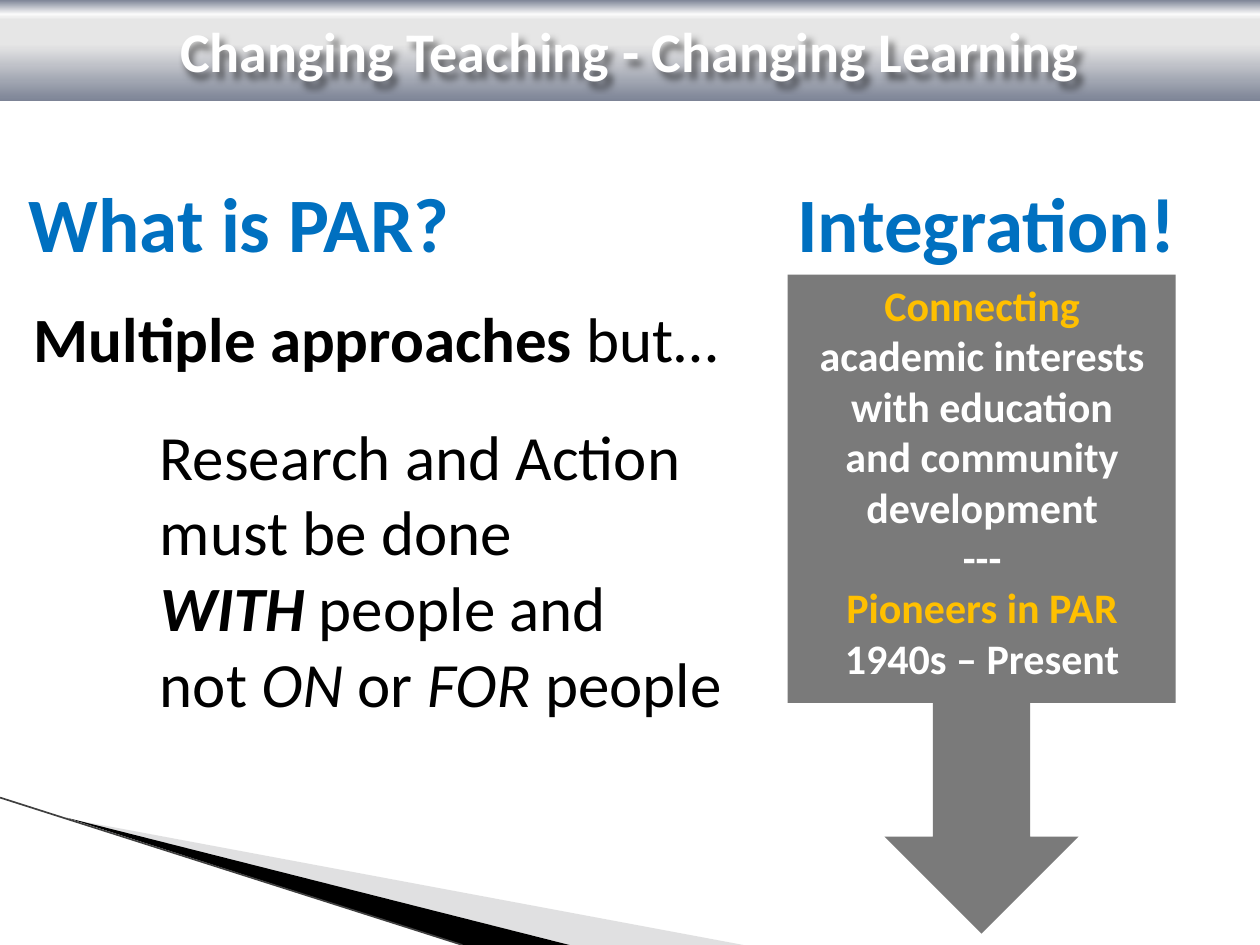
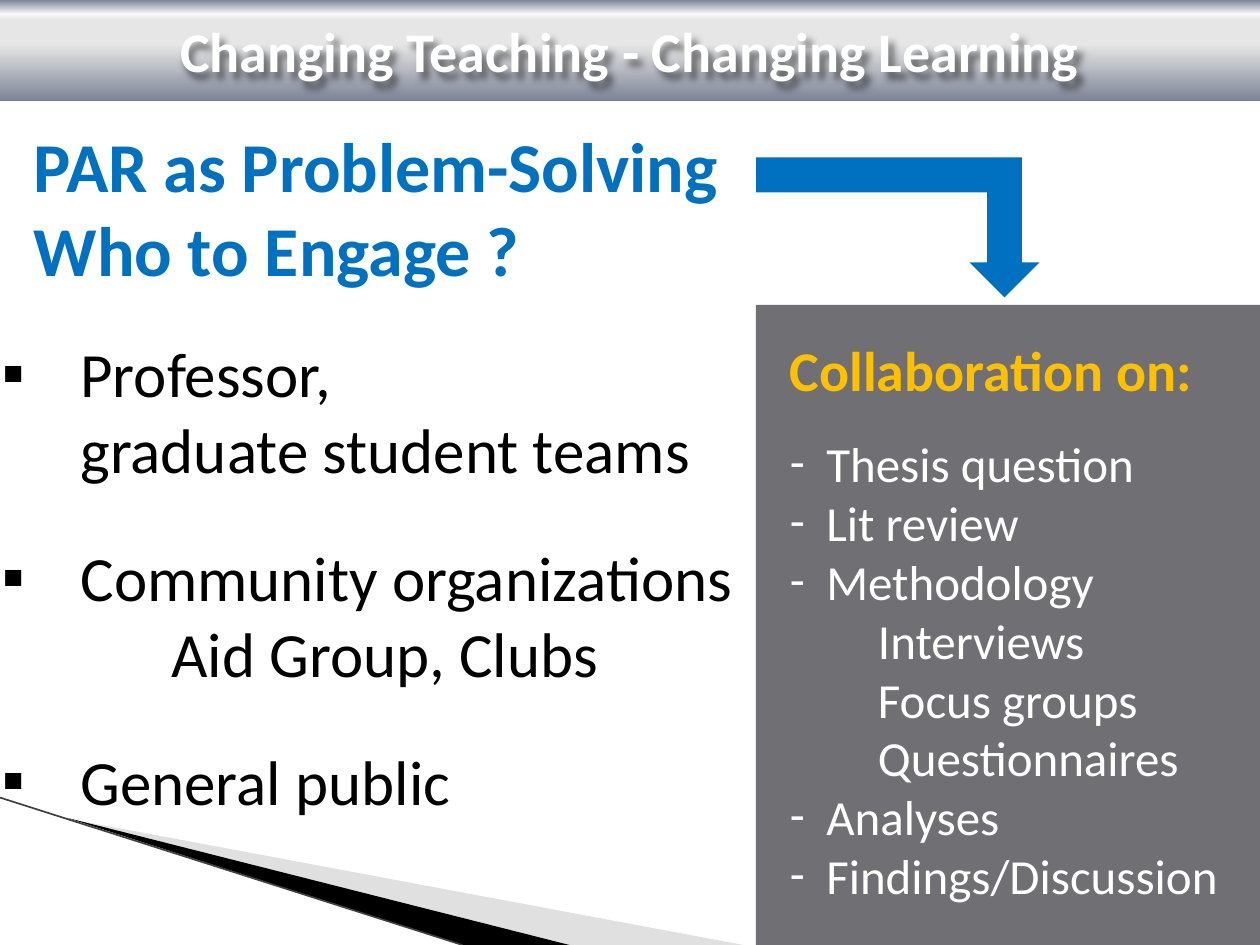
from lxml import etree
from pptx import Presentation
from pptx.dml.color import RGBColor
from pptx.enum.shapes import MSO_CONNECTOR, MSO_SHAPE
from pptx.enum.text import PP_ALIGN
from pptx.oxml import parse_xml
from pptx.oxml.ns import nsdecls, qn
from pptx.util import Emu, Inches, Pt

FONT = "Calibri"
COLORS = {
    "blue": "0070C0",
    "gold": "FFC000",
    "white": "FFFFFF",
    "black": "000000",
    "callout": "595959",
    "panel": "6F6F74",
    "wedge": "B3B3B5",
    "edge": "404040",
}
BAND_STOPS = [(0, "7D8496"), (14, "FAFAFA"), (20, "E6E6E6"), (44, "E6E6E6"), (100, "7D8496")]
RGB = {name: RGBColor.from_string(value) for name, value in COLORS.items()}

presentation = Presentation()
presentation.slide_width = Inches(10)
presentation.slide_height = Inches(7.5)
COLUMN = presentation.slide_width // 100
ROW = presentation.slide_height // 75


def paint(shape, color, alpha=None):
    shape.shadow.inherit = False
    shape.line.fill.background()
    shape.fill.solid()
    shape.fill.fore_color.rgb = RGB[color]
    if alpha:
        color_node = shape._element.spPr.find(qn("a:solidFill"))[0]
        etree.SubElement(color_node, qn("a:alpha")).set("val", str(alpha * 1000))


def write(slide, area, rows, size, color, bold=False, align=PP_ALIGN.LEFT):
    left, top, width, height = area
    text_box = slide.shapes.add_textbox(
        Emu(int(left * COLUMN)), Emu(int(top * ROW)), Emu(int(width * COLUMN)), Emu(int(height * ROW)))
    text_frame = text_box.text_frame
    text_frame.word_wrap = True
    for index, (text, options) in enumerate(rows):
        paragraph = text_frame.paragraphs[0] if index == 0 else text_frame.add_paragraph()
        first, *others = text.split("|")
        paragraph.text = first
        for piece in others:
            paragraph.add_run().text = piece
        properties = paragraph._p.get_or_add_pPr()
        properties.set("marL", str(int(options.get("indent", 0) * COLUMN)))
        properties.set("indent", str(int(-options.get("hang", 0) * COLUMN)))
        if "bullet" in options:
            etree.SubElement(properties, qn("a:buFont")).set("typeface", FONT)
            etree.SubElement(properties, qn("a:buChar")).set("char", options["bullet"])
        paragraph.alignment = align
        paragraph.space_after = Pt(options.get("after", 0))
        for run in paragraph.runs:
            run.font.name = FONT
            run.font.size = Pt(options.get("size", size))
            run.font.bold = options.get("bold", bold)
            run.font.color.rgb = RGB[options.get("color", color)]
    return text_box


slides = [presentation.slides.add_slide(presentation.slide_layouts[6]) for _ in range(2)]
integration_slide, engagement_slide = slides

wedges = [
    ([(5.5, 65), (59, 75), (45.2, 75)], "wedge", 40),
    ([(5.3, 64.9), (45.2, 75), (36.7, 75)], "black", None),
]
for slide in slides:
    for corners, color, alpha in wedges:
        points = [(int(x * COLUMN), int(y * ROW)) for x, y in corners]
        builder = slide.shapes.build_freeform(*points[0])
        builder.add_line_segments(points[1:])
        paint(builder.convert_to_shape(), color, alpha)

    edge = slide.shapes.add_connector(
        MSO_CONNECTOR.STRAIGHT, 0, int(63.3 * ROW), int(36.7 * COLUMN), 75 * ROW)
    edge.line.color.rgb = RGB["edge"]
    edge.line.width = Pt(0.95)
    etree.SubElement(edge._element.spPr, qn("a:effectLst"))

    band = slide.shapes.add_shape(MSO_SHAPE.RECTANGLE, 0, 0, 100 * COLUMN, 8 * ROW)
    paint(band, "white")
    stops = "".join(
        f'<a:gs pos="{position * 1000}"><a:srgbClr val="{color}"/></a:gs>'
        for position, color in BAND_STOPS)
    gradient = parse_xml(
        f'<a:gradFill {nsdecls("a")} rotWithShape="1"><a:gsLst>{stops}</a:gsLst>'
        '<a:lin ang="5400000" scaled="0"/></a:gradFill>')
    band_properties = band._element.spPr
    band_properties.replace(band_properties.find(qn("a:solidFill")), gradient)

    title = write(slide, (0, 0.8, 100, 5.6), [("Changing Teaching - Changing Learning", {})],
                  32, "white", True, PP_ALIGN.CENTER)
    title._element.spPr.append(parse_xml(
        f'<a:effectLst {nsdecls("a")}><a:outerShdw blurRad="50800" dist="50800" dir="3600000">'
        '<a:srgbClr val="000000"><a:alpha val="50000"/></a:srgbClr></a:outerShdw></a:effectLst>'))

callout = integration_slide.shapes.add_shape(
    MSO_SHAPE.DOWN_ARROW_CALLOUT, int(62.5 * COLUMN), int(21.8 * ROW),
    int(30.8 * COLUMN), int(52.3 * ROW))
paint(callout, "callout", 80)

for heading, left, width in [("What is PAR?", 1.3, 58.7), ("Integration!", 62.3, 37.7)]:
    write(integration_slide, (left, 13.4, width, 8), [(heading, {})], 44, "blue", True)

history = write(integration_slide, (63.8, 21.7, 28.3, 37.4), [
    ("Connecting |academic interests with education and community development", {}),
    ("---", {}),
    ("Pioneers in PAR", {"color": "gold"}),
    ("1940s – Present", {}),
], 24, "white", True, PP_ALIGN.CENTER)
history.text_frame.paragraphs[0].runs[0].font.color.rgb = RGB["gold"]

approaches = write(integration_slide, (1.7, 23.3, 59.2, 39.4), [
    ("Multiple approaches |but…", {"after": 24}),
    ("Research and Action", {"indent": 10}),
    ("must be done", {"indent": 10}),
    ("WITH| people and", {"indent": 10}),
    ("not |ON |or |FOR| people", {"indent": 10}),
], 36, "black")
opening, _, _, with_people, not_for_people = approaches.text_frame.paragraphs
for run in (opening.runs[0], with_people.runs[0]):
    run.font.bold = True
for run in (with_people.runs[0], not_for_people.runs[1], not_for_people.runs[3]):
    run.font.italic = True

panel = engagement_slide.shapes.add_shape(
    MSO_SHAPE.RECTANGLE, 60 * COLUMN, int(24.2 * ROW), 40 * COLUMN, int(50.8 * ROW))
paint(panel, "panel")

write(engagement_slide, (1.7, 9.2, 98.3, 14.5),
      [("PAR as Problem-Solving", {}), ("Who to Engage ?", {})], 40, "blue", True)

square = {"bullet": "▪", "indent": 6.2, "hang": 6.2}
write(engagement_slide, (-0.8, 26.1, 60.8, 39.7), [
    ("Professor,\vgraduate student teams", {**square, "after": 30}),
    ("Community organizations", square),
    ("Aid Group, Clubs", {"indent": 13.4, "after": 30}),
    ("General public", square),
], 36, "black")

dash = {"bullet": "-", "indent": 2.9, "hang": 2.9}
method = {"indent": 7}
write(engagement_slide, (61.7, 26.1, 38.3, 48.9), [
    ("Collaboration on:", {"size": 32, "color": "gold", "bold": True, "after": 18}),
    ("Thesis question", dash),
    ("Lit review", dash),
    ("Methodology", dash),
    ("Interviews", method),
    ("Focus groups", method),
    ("Questionnaires", method),
    ("Analyses", dash),
    ("Findings/Discussion", dash),
], 28, "white")

arrow = engagement_slide.shapes.add_shape(
    MSO_SHAPE.BENT_UP_ARROW, 60 * COLUMN, int(12.5 * ROW), int(22.5 * COLUMN), int(11.1 * ROW))
paint(arrow, "blue")
arrow._element.spPr.find(qn("a:xfrm")).set("flipV", "1")

presentation.save("out.pptx")
